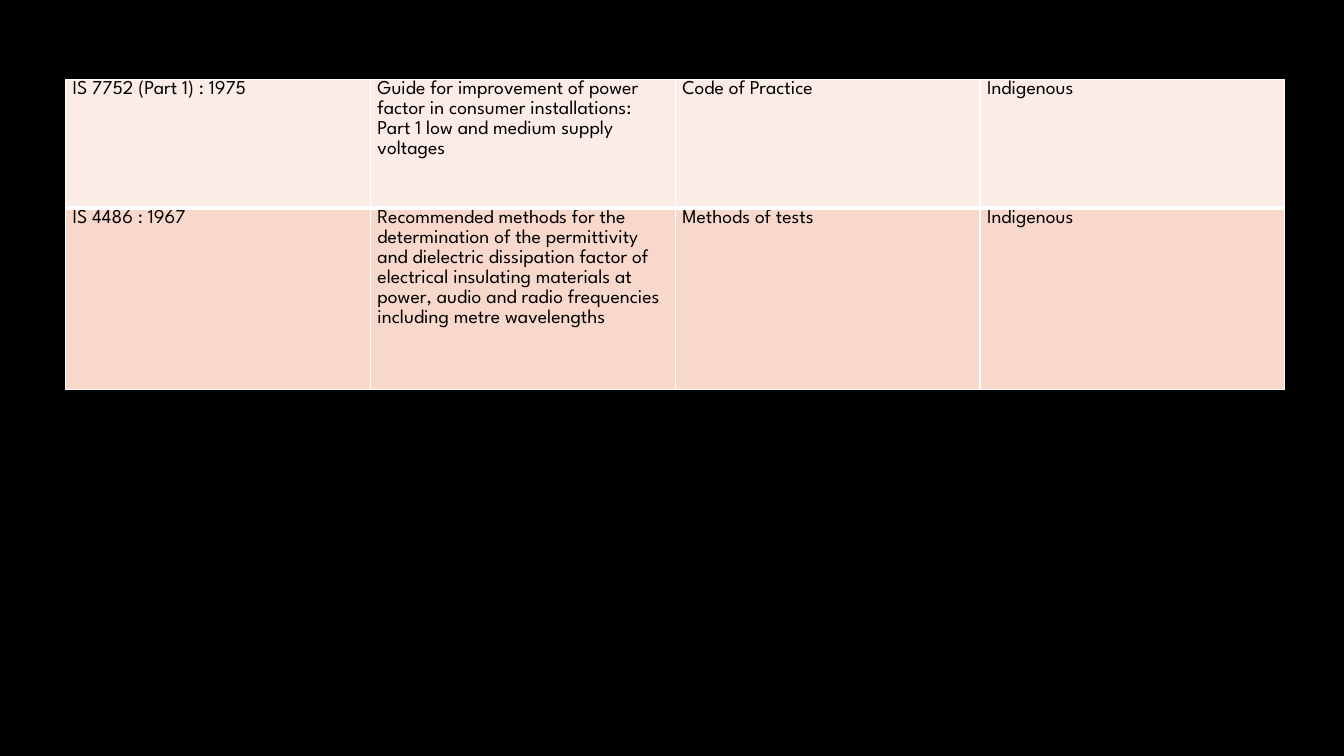
import pptx
import pptx.dml.color
import pptx.oxml
import pptx.oxml.ns
import pptx.util
from pptx.util import Cm

COLOURS = {
    "background": "000000",
    "text": "000000",
    "border": "FFFFFF",
    "light_row": "FCECE7",
    "dark_row": "F9D8CC",
}
FONT = "League Spartan"
THIN, THICK = 1, 3

STANDARDS = [
    (
        "IS 7752 (Part 1) : 1975",
        "Guide for improvement of power factor in consumer installations: "
        "Part 1 low and medium supply voltages",
        "Code of Practice",
        "Indigenous",
    ),
    (
        "IS 4486 : 1967",
        "Recommended methods for the determination of the permittivity and "
        "dielectric dissipation factor of electrical insulating materials at "
        "power, audio and radio frequencies including metre wavelengths",
        "Methods of tests",
        "Indigenous",
    ),
]
ROW_STYLES = [
    {"height": Cm(3.25), "fill": "light_row", "top": THIN, "bottom": THICK},
    {"height": Cm(4.56), "fill": "dark_row", "top": THICK, "bottom": THIN},
]


def colour(name):
    return pptx.dml.color.RGBColor.from_string(COLOURS[name])


def set_borders(cell, top, bottom):
    properties = cell._tc.get_or_add_tcPr()
    widths = {"lnL": THIN, "lnR": THIN, "lnT": top, "lnB": bottom}
    for side, points in widths.items():
        properties.append(pptx.oxml.parse_xml(
            f'<a:{side} {pptx.oxml.ns.nsdecls("a")} w="{pptx.util.Pt(points)}">'
            f'<a:solidFill><a:srgbClr val="{COLOURS["border"]}"/></a:solidFill>'
            f'</a:{side}>'
        ))


def write_cell(cell, text, style):
    set_borders(cell, style["top"], style["bottom"])
    cell.fill.solid()
    cell.fill.fore_color.rgb = colour(style["fill"])
    cell.margin_left = cell.margin_right = Cm(0.18)
    cell.margin_top = cell.margin_bottom = 0
    para = cell.text_frame.paragraphs[0]
    para.line_spacing = 1.1
    span = para.add_run()
    span.text = text
    span.font.name = FONT
    span.font.size = pptx.util.Pt(14)
    span.font.color.rgb = colour("text")


def add_standards_table(page, left, top, width):
    height = sum(style["height"] for style in ROW_STYLES)
    frame = page.shapes.add_table(
        len(STANDARDS), len(STANDARDS[0]), left, top, width, height
    )
    table = frame.table
    table.first_row = False
    table.horz_banding = False
    for row, texts, style in zip(table.rows, STANDARDS, ROW_STYLES):
        row.height = style["height"]
        for cell, text in zip(row.cells, texts):
            write_cell(cell, text, style)


def main():
    deck = pptx.Presentation()
    deck.slide_width = Cm(33.87)
    deck.slide_height = Cm(19.05)
    page = deck.slides.add_slide(deck.slide_layouts[6])
    page.background.fill.solid()
    page.background.fill.fore_color.rgb = colour("background")
    add_standards_table(page, Cm(1.65), Cm(2), Cm(30.73))
    deck.save("out.pptx")


if __name__ == "__main__":
    main()
